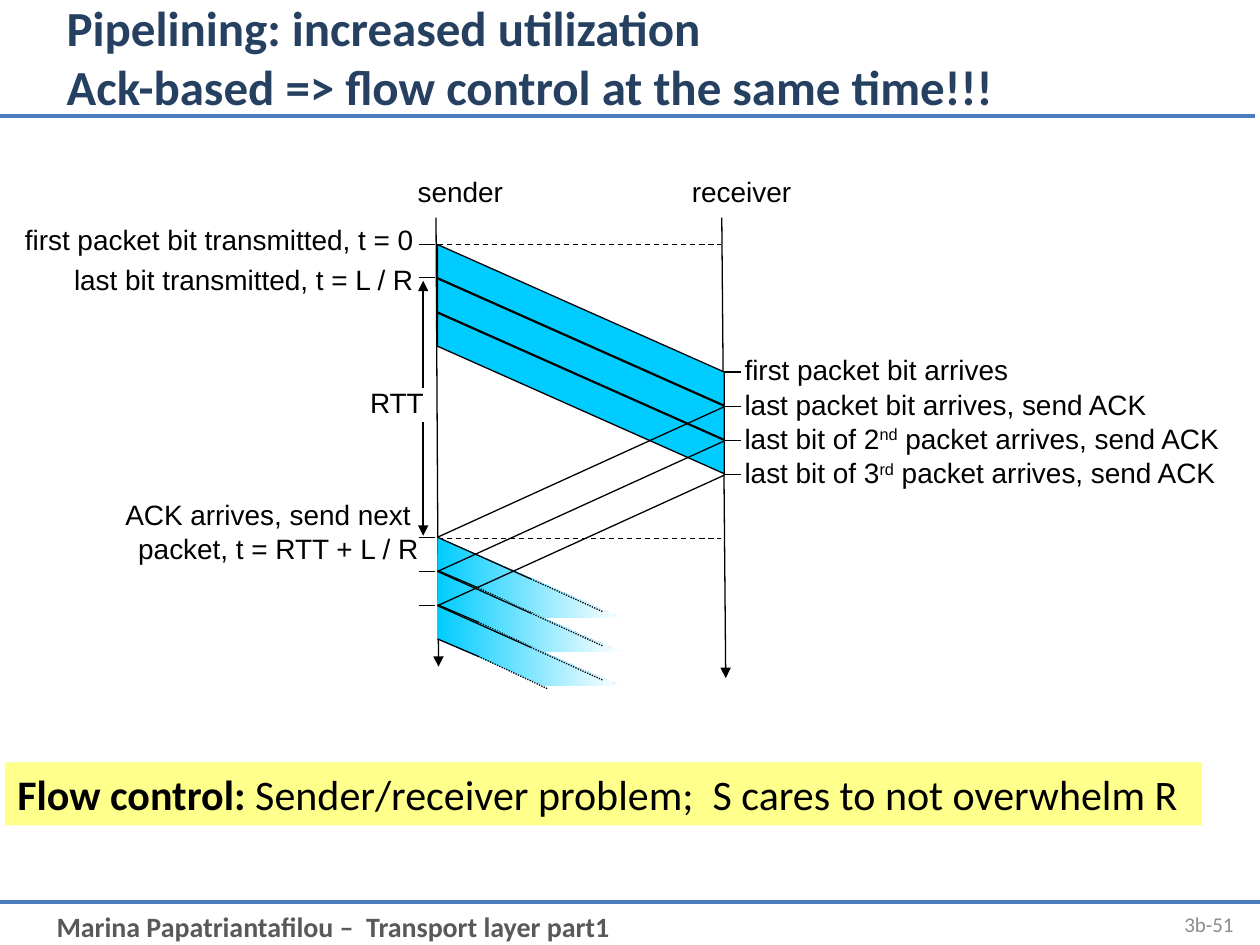
from lxml import etree
from pptx import Presentation
from pptx.dml.color import RGBColor
from pptx.enum.dml import MSO_LINE
from pptx.enum.shapes import MSO_CONNECTOR
from pptx.enum.text import MSO_ANCHOR, MSO_AUTO_SIZE, PP_ALIGN
from pptx.oxml.ns import qn
from pptx.util import Cm, Pt

LEFT, RIGHT = PP_ALIGN.LEFT, PP_ALIGN.RIGHT
TOP, MIDDLE = MSO_ANCHOR.TOP, MSO_ANCHOR.MIDDLE
DASH, DOT = MSO_LINE.DASH, MSO_LINE.ROUND_DOT
STRAIGHT = MSO_CONNECTOR.STRAIGHT

THEME = {
    "ink": "000000", "paper": "FFFFFF", "rule": "4B7EBC",
    "packet": "00CCFF", "highlight": "FFFF00",
    "thin": 0.75, "thick": 2.25,
    "title": {"name": "Calibri", "size": 28, "bold": True, "color": "254061"},
    "footer": {"name": "Calibri", "size": 16, "bold": True, "color": "595959"},
    "number": {"name": "Calibri", "size": 12, "color": "8C8C8C"},
    "label": {"name": "Arial", "size": 16, "color": "000000"},
    "flow": {"name": "Calibri", "size": 24, "color": "000000"},
}

# Content: a paragraph is a list of (text, extra format) runs; boxes in cm
TITLE = "Pipelining: increased utilization\nAck-based => flow control at the same time!!!"
FOOTER = "Marina Papatriantafilou –  Transport layer part1"
NUMBER = "3b-51"
LEFT_LABELS = [
    (["first packet bit transmitted, t = 0"], (0, 4.37, 8.59, 0.99)),
    (["last bit transmitted, t = L / R"], (0.97, 5.16, 7.62, 0.99)),
    (["RTT "], (6.25, 7.65, 2.69, 0.94)),
    (["ACK arrives, send next ", "packet, t = RTT + L / R"], (1.37, 9.91, 7.32, 1.78)),
]
HEADINGS = [
    (["sender"], (7.49, 3.4, 2.9, 0.99)),
    (["receiver"], (13.13, 3.4, 3.07, 0.99)),
]
SUPER = {"super": True}
ARRIVALS = [
    [("first packet bit arrives", {})],
    [("last packet bit arrives, send ACK", {})],
    [("last bit of 2", {}), ("nd", SUPER), (" packet arrives, send ACK", {})],
    [("last bit of 3", {}), ("rd", SUPER), (" packet arrives, send ACK", {})],
]
FLOW = [("Flow control:", {"bold": True}),
        (" Sender/receiver problem;  S cares to not overwhelm R", {})]

# Timing diagram geometry, in cm
SENDER, RECEIVER = 8.82, 14.6
START, ACK_SENT, ACK_BACK = 4.93, 8.2, 10.83
STEP, BAND, DELAY = 0.69, 0.67, 2.57
TICK = 0.33
PACKETS = 3
RTT_X = 8.53

prs = Presentation()
prs.slide_width, prs.slide_height = Cm(25.4), Cm(19.05)
s = prs.slides.add_slide(prs.slide_layouts[5])


def rgb(name):
    return RGBColor.from_string(THEME.get(name, name))


def format_run(r, style):
    values = dict(style)
    r.font.color.rgb = rgb(values.pop("color"))
    values["size"] = Pt(values["size"])
    if values.pop("super", False):
        r._r.get_or_add_rPr().set("baseline", "30000")
    for key, value in values.items():
        setattr(r.font, key, value)


def text_box(paragraphs, box, style, align=LEFT, anchor=TOP, wrap=True):
    sp = s.shapes.add_textbox(*map(Cm, box))
    tf = sp.text_frame
    tf.word_wrap, tf.vertical_anchor = wrap, anchor
    for i, runs in enumerate(paragraphs):
        p = tf.paragraphs[0] if i == 0 else tf.add_paragraph()
        p.alignment = align
        for text, extra in [(runs, {})] if isinstance(runs, str) else runs:
            r = p.add_run()
            r.text = text
            format_run(r, {**THEME[style], **extra})
    return sp


def fill_solid(sp, color):
    sp.fill.solid()
    sp.fill.fore_color.rgb = rgb(color)


def line(x1, y1, x2, y2, dash=None, arrow=False, color="ink", width="thin"):
    sp = s.shapes.add_connector(STRAIGHT, *map(Cm, (x1, y1, x2, y2)))
    sp.line.color.rgb = rgb(color)
    sp.line.width = Pt(THEME[width])
    if dash:
        sp.line.dash_style = dash
    if arrow:
        etree.SubElement(sp.line._ln, qn("a:tailEnd"), type="triangle")
    etree.SubElement(sp._element.spPr, qn("a:effectLst"))


def polygon(points):
    start, *rest = [(Cm(x), Cm(y)) for x, y in points]
    builder = s.shapes.build_freeform(*start)
    builder.add_line_segments(rest, close=True)
    sp = builder.convert_to_shape()
    sp.shadow.inherit = False
    return sp


def packet(y):
    sp = polygon([(SENDER, y), (RECEIVER, y + DELAY),
                  (RECEIVER, y + DELAY + BAND), (SENDER, y + BAND)])
    fill_solid(sp, "packet")
    sp.line.color.rgb = rgb("ink")
    sp.line.width = Pt(THEME["thin"])


def fading_packet(y):
    x = SENDER
    sp = polygon([(x, y), (x + 3.68, y + 1.62), (x + 2.18, y + 1.62), (x, y + BAND)])
    sp.fill.gradient()
    sp.fill.gradient_angle = 0
    for stop, color in zip(sp.fill.gradient_stops, ("packet", "paper")):
        stop.color.rgb = rgb(color)
    sp.line.fill.background()
    # Each edge runs solid, then dotted: offsets of start, change and end
    for top, (dx, dy), (ex, ey) in [(0, (1.88, 0.84), (3.33, 1.5)),
                                    (BAND, (0.82, 1.02), (2.23, 1.68))]:
        line(x, y + top, x + dx, y + dy)
        line(x + dx, y + dy, x + ex, y + ey, DOT)


# Rules, footer and title
line(0, 18.19, 25.4, 18.19, color="rule", width="thick")
line(-0.1, 2.34, 25.3, 2.34, color="rule", width="thick")
text_box([FOOTER], (0.89, 18.21, 23.5, 0.94), "footer")
text_box([NUMBER], (23.09, 18.11, 2.03, 1.02), "number", RIGHT, MIDDLE)

title = s.shapes.title
title.left, title.top, title.width, title.height = map(Cm, (1.09, 0.33, 22.83, 1.6))
tf = title.text_frame
tf.auto_size, tf.vertical_anchor = MSO_AUTO_SIZE.NONE, MIDDLE
p = tf.paragraphs[0]
p.text, p.alignment = TITLE.replace("\n", "\v"), LEFT
for r in p.runs:
    format_run(r, THEME["title"])

# Time axes and reference lines
line(8.79, 4.32, 8.84, 13.44, arrow=True)
line(14.55, 4.37, 14.63, 13.67, arrow=True)
for y in (START, ACK_BACK + 0.02):
    line(SENDER, y, 14.53, y, DASH)

# Labels
for paragraphs, box in HEADINGS + LEFT_LABELS[:1]:
    fill_solid(text_box(paragraphs, box, "label", RIGHT), "paper")
for paragraphs, box in LEFT_LABELS[1:]:
    text_box(paragraphs, box, "label", RIGHT)
for i, runs in enumerate(ARRIVALS):
    text_box([runs], (14.76, 6.99 + i * STEP, 10.64, 1.07), "label")
    y = START + DELAY + i * STEP
    line(RECEIVER, y, RECEIVER + TICK, y)

# Packets, the next window and the ACKs
for i in range(PACKETS):
    packet(START + i * STEP)
for i in range(PACKETS):
    fading_packet(ACK_BACK + i * STEP)
for i in range(PACKETS):
    line(RECEIVER, ACK_SENT + i * STEP, SENDER, ACK_BACK + i * STEP)

# Sender ticks and round-trip arrows
for y in [START, START + BAND] + [ACK_BACK + i * STEP for i in range(PACKETS)]:
    line(SENDER - 0.05, y, SENDER - 0.05 - TICK, y)
line(RTT_X, 8.51, RTT_X, 10.8, arrow=True)
line(RTT_X, 7.82, RTT_X, 5.66, arrow=True)

# Flow control banner
banner = text_box([FLOW], (0.1, 15.37, 24.13, 1.27), "flow", wrap=False)
fill_solid(banner, "highlight")
color = banner._element.spPr.find(qn("a:solidFill"))[0]
etree.SubElement(color, qn("a:alpha"), val="45000")

prs.save("out.pptx")
